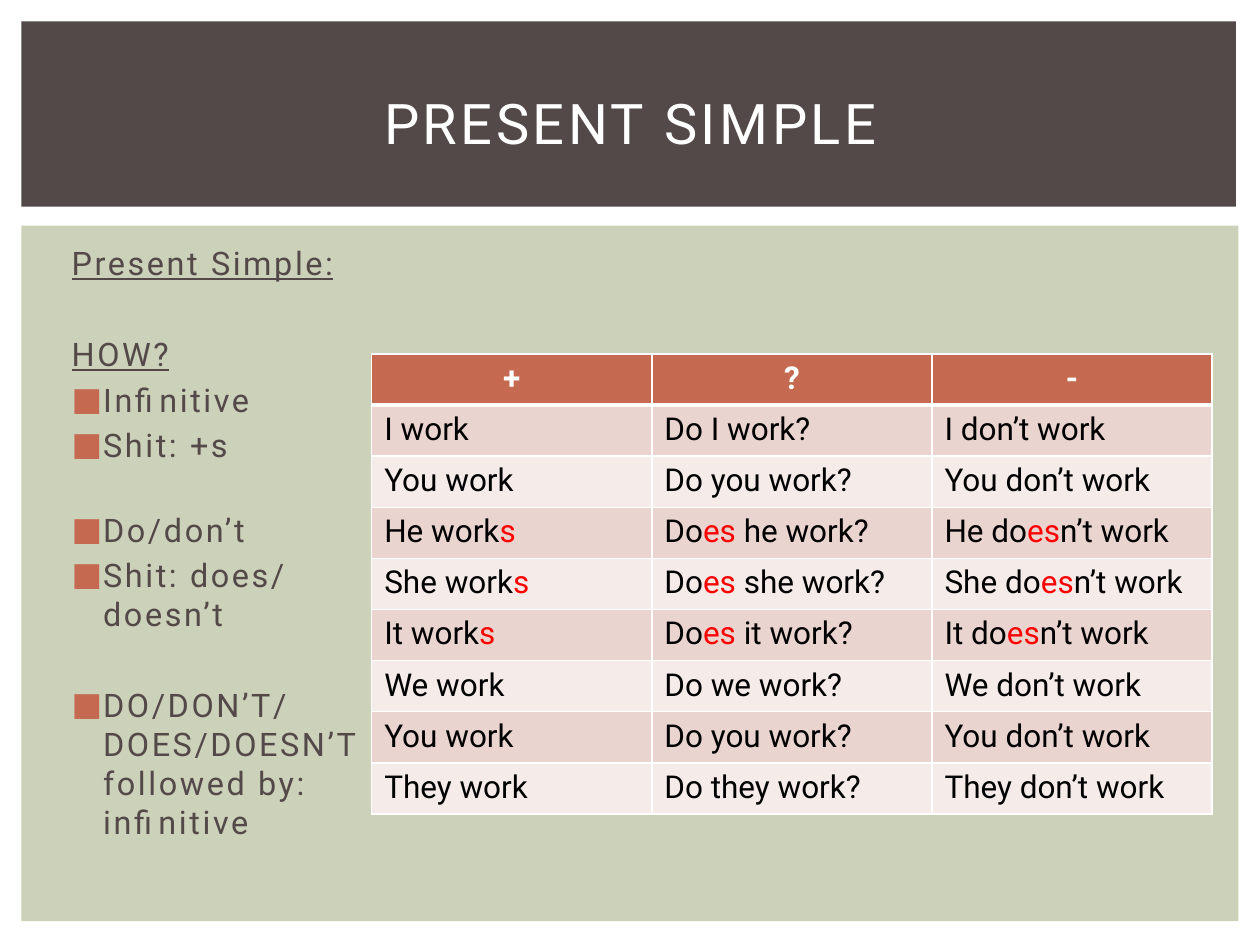
import lxml.etree
import pptx
import pptx.dml.color
import pptx.enum.shapes
import pptx.enum.text
import pptx.oxml.ns
import pptx.util
from pptx.util import Inches

RGBColor = pptx.dml.color.RGBColor
WHITE = RGBColor(0xFF, 0xFF, 0xFF)
BLACK = RGBColor(0x00, 0x00, 0x00)
RED = RGBColor(0xFF, 0x00, 0x00)
BROWN = RGBColor(0x53, 0x49, 0x49)
SAGE = RGBColor(0xCC, 0xD1, 0xB9)
RUST = RGBColor(0xC6, 0x69, 0x51)
ROSE = RGBColor(0xEA, 0xD4, 0xD0)
PALE_ROSE = RGBColor(0xF5, 0xEB, 0xE9)
CENTER = pptx.enum.text.PP_ALIGN.CENTER
LEFT = pptx.enum.text.PP_ALIGN.LEFT


def write(paragraph, text, size=18, color=BLACK, bold=False, underline=False,
          tracking=0, align=LEFT):
    """Write text; parts between bars are red, and newlines become line breaks."""
    paragraph.alignment = align
    for index, part in enumerate(text.split("|")):
        for line_number, line in enumerate(part.split("\n")):
            if line_number:
                paragraph.add_line_break()
            if not line:
                continue
            run = paragraph.add_run()
            run.text = line
            run.font.name = "Roboto"
            run.font.size = pptx.util.Pt(size)
            run.font.bold = bold
            run.font.underline = underline
            run.font.color.rgb = RED if index % 2 else color
            if tracking:
                run.font._element.set("spc", str(int(tracking * 100)))


def add_child(parent, tag, **attributes):
    child = lxml.etree.SubElement(parent, pptx.oxml.ns.qn(tag))
    for name, value in attributes.items():
        child.set(name, str(value))
    return child


presentation = pptx.Presentation()
presentation.slide_width = Inches(10)
presentation.slide_height = Inches(7.5)
slide = presentation.slides.add_slide(presentation.slide_layouts[6])

# Background panels
for top, width, height, color in [(1.79, 9.66, 5.52, SAGE), (0.17, 9.64, 1.47, BROWN)]:
    panel = slide.shapes.add_shape(
        pptx.enum.shapes.MSO_SHAPE.RECTANGLE,
        Inches(0.17), Inches(top), Inches(width), Inches(height))
    panel.shadow.inherit = False
    panel.fill.solid()
    panel.fill.fore_color.rgb = color
    panel.line.fill.background()

# Title
title = slide.shapes.add_textbox(Inches(0.42), Inches(0.39), Inches(9.17), Inches(1.15))
title.text_frame.word_wrap = True
title.text_frame.vertical_anchor = pptx.enum.text.MSO_ANCHOR.MIDDLE
write(title.text_frame.paragraphs[0], "PRESENT SIMPLE", size=32, color=WHITE,
      tracking=2, align=CENTER)

# Rules: text, space before in points, whether it is a heading
rules = [
    ("Present Simple:", 3.7, True),
    ("HOW?", 29.7, True),
    ("Infinitive", 3.7, False),
    ("Shit: +s", 3.7, False),
    ("Do/don’t", 26, False),
    ("Shit: does/\ndoesn’t", 3.7, False),
    ("DO/DON’T/\nDOES/DOESN’T\nfollowed by:\ninfinitive", 29.7, False),
]
body = slide.shapes.add_textbox(Inches(0.42), Inches(1.88), Inches(9.19), Inches(4.82))
body.text_frame.word_wrap = True
for index, (text, space_before, is_heading) in enumerate(rules):
    paragraph = body.text_frame.paragraphs[0] if index == 0 else body.text_frame.add_paragraph()
    write(paragraph, text, size=18.5, color=BROWN, underline=is_heading, tracking=1.5)
    paragraph.space_before = pptx.util.Pt(space_before)
    paragraph.line_spacing = pptx.util.Pt(22.3)
    properties = paragraph._p.get_or_add_pPr()
    properties.set("marL", str(Inches(0.05 if is_heading else 0.3)))
    properties.set("indent", str(Inches(0 if is_heading else -0.25)))
    if not is_heading:
        bullet_color = add_child(properties, "a:buClr")
        add_child(bullet_color, "a:srgbClr", val=RUST)
        add_child(properties, "a:buFont", typeface="Roboto")
        add_child(properties, "a:buChar", char="■")

# Conjugation table
rows = [("+", "?", "-")]
for subject in ["I", "You", "He", "She", "It", "We", "You", "They"]:
    pronoun = subject if subject == "I" else subject.lower()
    if subject in ("He", "She", "It"):
        rows.append((f"{subject} work|s|", f"Do|es| {pronoun} work?", f"{subject} do|es|n’t work"))
    else:
        rows.append((f"{subject} work", f"Do {pronoun} work?", f"{subject} don’t work"))

table_frame = slide.shapes.add_table(
    len(rows), 3, Inches(2.95), Inches(2.81), Inches(6.67), Inches(3.65))
table = table_frame.table
for row_index, texts in enumerate(rows):
    is_header = row_index == 0
    fill_color = RUST if is_header else (PALE_ROSE, ROSE)[row_index % 2]
    for column_index, text in enumerate(texts):
        cell = table.cell(row_index, column_index)
        write(cell.text_frame.paragraphs[0], text, color=WHITE if is_header else BLACK,
              bold=is_header, align=CENTER if is_header else LEFT)
        cell_properties = cell._tc.get_or_add_tcPr()
        for side in "LRTB":
            heavy = (row_index, side) in [(0, "B"), (1, "T")]
            border = add_child(cell_properties, f"a:ln{side}",
                               w=pptx.util.Pt(3 if heavy else 1))
            add_child(add_child(border, "a:solidFill"), "a:srgbClr", val=WHITE)
        cell.fill.solid()
        cell.fill.fore_color.rgb = fill_color

presentation.save("out.pptx")
